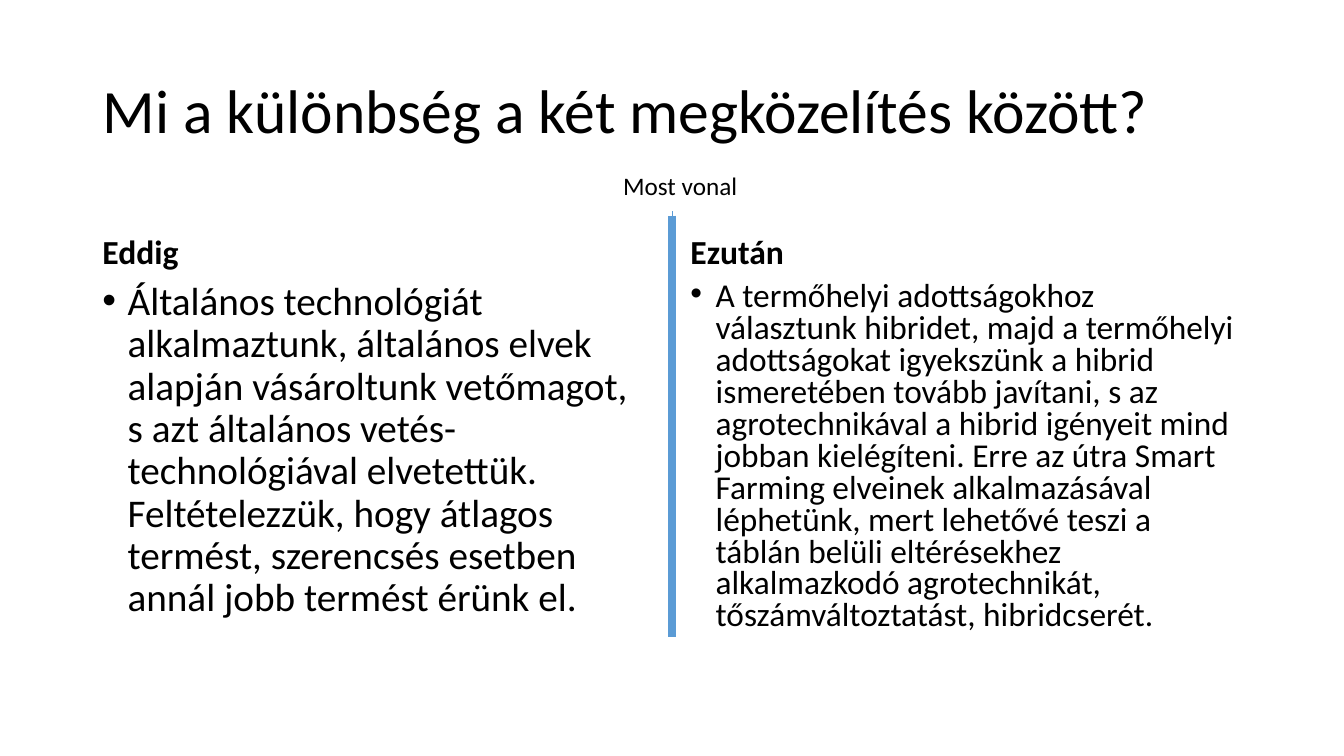
from dataclasses import dataclass

import lxml.etree
import pptx
import pptx.dml.color
import pptx.enum.shapes
import pptx.enum.text
import pptx.oxml.ns
import pptx.slide
import pptx.text.text
import pptx.util

Pt = pptx.util.Pt
qn = pptx.oxml.ns.qn
Align = pptx.enum.text.PP_ALIGN
Anchor = pptx.enum.text.MSO_ANCHOR


@dataclass(frozen=True)
class Theme:
    font: str = "Calibri"
    text: str = "000000"
    accent: str = "5B9BD5"
    background: str = "FFFFFF"
    title: float = 44
    heading: float = 24
    label: float = 18
    indent: float = 18


@dataclass(frozen=True)
class Column:
    left: float
    width: float
    heading_idx: int
    body_idx: int
    heading: str
    body: str
    body_size: float
    line_spacing: float


@dataclass(frozen=True)
class Divider:
    top: float
    bottom: float
    weight: float


THEME = Theme()
HEADING_TOP, HEADING_HEIGHT = 132.5, 65
BODY_TOP, BODY_HEIGHT = 197.5, 290
DIVIDER_X = 480

COLUMNS = [
    Column(66, 406, 1, 2, "Eddig",
           "Általános technológiát alkalmaztunk, általános elvek alapján "
           "vásároltunk vetőmagot, s azt általános vetés-technológiával "
           "elvetettük. Feltételezzük, hogy átlagos termést, szerencsés "
           "esetben annál jobb termést érünk el.", 28, 0.9),
    Column(486, 408, 3, 4, "Ezután",
           "A termőhelyi adottságokhoz választunk hibridet, majd a termőhelyi "
           "adottságokat igyekszünk a hibrid ismeretében tovább javítani, s az "
           "agrotechnikával a hibrid igényeit mind jobban kielégíteni. Erre az "
           "útra Smart Farming elveinek alkalmazásával léphetünk, mert lehetővé "
           "teszi a táblán belüli eltérésekhez alkalmazkodó agrotechnikát, "
           "tőszámváltoztatást, hibridcserét.", 23.8, 0.8),
]
DIVIDERS = [Divider(151, 156, 0.5), Divider(154, 455, 5.75)]


def rgb(value: str) -> pptx.dml.color.RGBColor:
    return pptx.dml.color.RGBColor.from_string(value)


def place(sp, left: float, top: float, width: float, height: float) -> None:
    sp.left, sp.top, sp.width, sp.height = Pt(left), Pt(top), Pt(width), Pt(height)


def set_bullet(p, bulleted: bool) -> None:
    pPr = p._p.get_or_add_pPr()
    indent = Pt(THEME.indent) if bulleted else 0
    pPr.set("marL", str(indent))
    pPr.set("indent", str(-indent))
    if bulleted:
        lxml.etree.SubElement(pPr, qn("a:buFont"), typeface="Arial")
        lxml.etree.SubElement(pPr, qn("a:buChar"), char="•")
    else:
        lxml.etree.SubElement(pPr, qn("a:buNone"))


def write(tf: pptx.text.text.TextFrame, text: str, size: float, anchor: Anchor,
          spacing: float = 0.9, bold: bool = False, bulleted: bool = False,
          wrap: bool = True) -> None:
    tf.word_wrap = wrap
    tf.auto_size = pptx.enum.text.MSO_AUTO_SIZE.NONE
    tf.vertical_anchor = anchor
    p = tf.paragraphs[0]
    set_bullet(p, bulleted)
    p.alignment = Align.LEFT
    p.line_spacing = spacing
    p.space_before = Pt(0)
    r = p.add_run()
    r.text = text
    r.font.name = THEME.font
    r.font.size = Pt(size)
    r.font.bold = bold
    r.font.color.rgb = rgb(THEME.text)


def add_column(s: pptx.slide.Slide, col: Column) -> None:
    holders = {sp.placeholder_format.idx: sp for sp in s.placeholders}
    heading, body = holders[col.heading_idx], holders[col.body_idx]
    place(heading, col.left, HEADING_TOP, col.width, HEADING_HEIGHT)
    write(heading.text_frame, col.heading, THEME.heading, Anchor.BOTTOM, bold=True)
    place(body, col.left, BODY_TOP, col.width, BODY_HEIGHT)
    write(body.text_frame, col.body, col.body_size, Anchor.TOP,
          spacing=col.line_spacing, bulleted=True)


def add_divider(s: pptx.slide.Slide, line: Divider) -> None:
    sp = s.shapes.add_connector(
        pptx.enum.shapes.MSO_CONNECTOR.STRAIGHT,
        Pt(DIVIDER_X), Pt(line.top), Pt(DIVIDER_X), Pt(line.bottom))
    sp.line.color.rgb = rgb(THEME.accent)
    sp.line.width = Pt(line.weight)
    lxml.etree.SubElement(sp._element.spPr, qn("a:effectLst"))


def main() -> None:
    prs = pptx.Presentation()
    prs.slide_width, prs.slide_height = Pt(960), Pt(540)
    s = prs.slides.add_slide(prs.slide_layouts.get_by_name("Comparison"))
    s.background.fill.solid()
    s.background.fill.fore_color.rgb = rgb(THEME.background)

    # Title
    place(s.shapes.title, 66, 29, 828, 104)
    write(s.shapes.title.text_frame, "Mi a különbség a két megközelítés között?",
          THEME.title, Anchor.MIDDLE)

    # Two compared columns
    for col in COLUMNS:
        add_column(s, col)

    # Dividing line and its label
    for line in DIVIDERS:
        add_divider(s, line)
    label = s.shapes.add_textbox(Pt(438), Pt(118), Pt(97), Pt(29))
    write(label.text_frame, "Most vonal", THEME.label, Anchor.TOP,
          spacing=1.0, wrap=False)
    label.text_frame.auto_size = pptx.enum.text.MSO_AUTO_SIZE.SHAPE_TO_FIT_TEXT

    prs.save("out.pptx")


if __name__ == "__main__":
    main()
